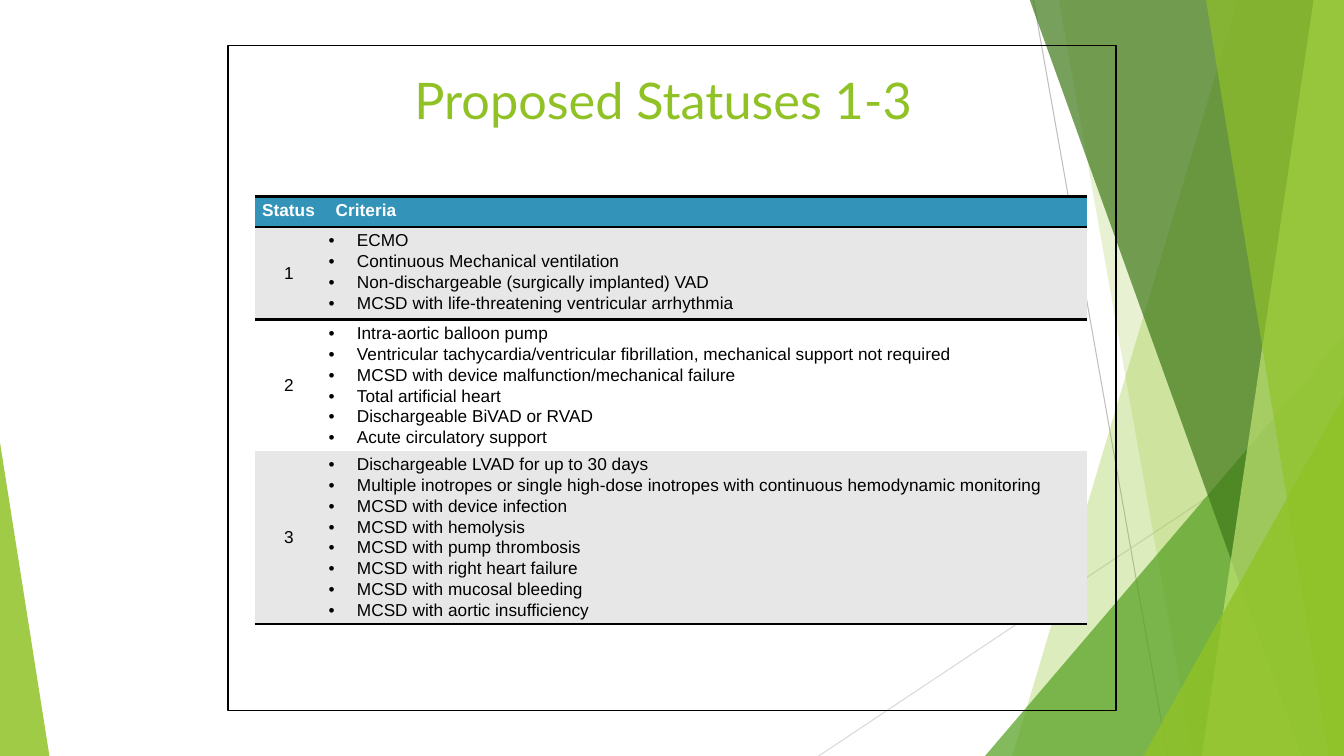
from lxml import etree
from pptx import Presentation
from pptx import util as u
from pptx.dml.color import RGBColor
from pptx.enum import shapes, text
from pptx.oxml import ns

PX = 9144  # 100 px to the inch
WIDTH, HEIGHT = 1333, 750
COLORS = {
    "lime": "90C226", "leaf": "54A021", "forest": "3F7819", "pale": "C0E474",
    "header": "3393B9", "band": "E7E7E7", "black": "000000", "white": "FFFFFF",
    "line": "BFBFBF", "faint": "D9D9D9",
}
PLAIN_TABLE = "{2D5ABB26-0587-4C30-8999-92F81FD0307C}"
BODY_SIZE = u.Pt(12.3)
LINE_PITCH = u.Pt(14.85)
HANG = 28

CRITERIA = [
    ("1", 92, ["ECMO",
               "Continuous Mechanical ventilation",
               "Non-dischargeable (surgically implanted) VAD",
               "MCSD with life-threatening ventricular arrhythmia"]),
    ("2", 130, ["Intra-aortic balloon pump",
                "Ventricular tachycardia/ventricular fibrillation, "
                "mechanical support not required",
                "MCSD with device malfunction/mechanical failure",
                "Total artificial heart",
                "Dischargeable BiVAD or RVAD",
                "Acute circulatory support"]),
    ("3", 172, ["Dischargeable LVAD for up to 30 days",
                "Multiple inotropes or single high-dose inotropes with "
                "continuous hemodynamic monitoring",
                "MCSD with device infection",
                "MCSD with hemolysis",
                "MCSD with pump thrombosis",
                "MCSD with right heart failure",
                "MCSD with mucosal bleeding",
                "MCSD with aortic insufficiency"]),
]


def px(*lengths):
    return [length * PX for length in lengths]


def rgb(name):
    return RGBColor.from_string(COLORS[name])


def add_element(parent, tag, **attributes):
    return etree.SubElement(parent, ns.qn(tag), attributes)


def paint(shape, color, opacity):
    shape.shadow.inherit = False
    shape.line.fill.background()
    shape.fill.solid()
    shape.fill.fore_color.rgb = rgb(color)
    fill = shape.fill._xPr.find(ns.qn("a:solidFill"))
    add_element(fill[0], "a:alpha", val=str(opacity * 1000))


def add_ray(page, start, end, color):
    ray = page.shapes.add_connector(
        shapes.MSO_CONNECTOR.STRAIGHT, *px(*start, *end))
    ray.line.color.rgb = rgb(color)
    ray.line.width = u.Pt(0.75)
    add_element(ray._element.spPr, "a:effectLst")


def add_shard(page, top_left, top_right, bottom_left, color, opacity):
    """Draw a full-height facet that ends at the right edge of the page."""
    builder = page.shapes.build_freeform(top_left, -1, scale=PX)
    builder.add_line_segments(
        [(top_right, -1), (WIDTH, HEIGHT), (bottom_left, HEIGHT)])
    paint(builder.convert_to_shape(), color, opacity)


def add_corner(page, left, top, width, apex, color, opacity):
    """Draw a triangle that stands on the bottom edge of the page."""
    corner = page.shapes.add_shape(
        shapes.MSO_SHAPE.ISOSCELES_TRIANGLE,
        *px(left, top, width, HEIGHT - top))
    corner.adjustments[0] = apex
    paint(corner, color, opacity)


def add_decoration(page):
    add_ray(page, (1025, 0), (1158, HEIGHT), "line")
    add_ray(page, (WIDTH, 403), (812, HEIGHT), "faint")
    add_shard(page, 1228, WIDTH, 1004, "lime", 30)
    add_shard(page, 1050, WIDTH, 1183, "lime", 20)
    add_corner(page, 977, 333, 356, 1, "leaf", 72)
    add_shard(page, 1021, WIDTH, 1291, "forest", 70)
    add_shard(page, 1303, WIDTH, 1192, "pale", 70)
    add_shard(page, 1196, WIDTH, 1318, "lime", 65)
    add_corner(page, 1134, 393, 199, 1, "lime", 80)
    add_corner(page, 0, 439, 49, 0, "lime", 85)


def add_title(page, wording):
    title = page.shapes.title
    title.left, title.top, title.width, title.height = px(410, 68, 531, 62)
    frame = title.text_frame
    frame.margin_left, frame.margin_top = px(1, 1)
    frame.margin_right = frame.margin_bottom = 0
    frame.vertical_anchor = text.MSO_ANCHOR.TOP
    frame.auto_size = text.MSO_AUTO_SIZE.NONE
    para = frame.paragraphs[0]
    para.alignment = text.PP_ALIGN.LEFT
    add_span(para, wording, "lime", "Lato", u.Pt(36))


def add_span(para, wording, color, font="Arial", size=BODY_SIZE, bold=False):
    span = para.add_run()
    span.text = wording
    span.font.name, span.font.size, span.font.bold = font, size, bold
    span.font.color.rgb = rgb(color)


def add_bullet(para):
    properties = para._p.get_or_add_pPr()
    properties.set("marL", str(HANG * PX))
    properties.set("indent", str(-HANG * PX))
    add_element(properties, "a:buFont", typeface="Arial")
    add_element(properties, "a:buChar", char="•")


def rule_cell(cell, *sides):
    """Draw black borders; call before the cell is filled."""
    for side in sides:
        border = add_element(cell._tc.get_or_add_tcPr(), side, w=str(u.Pt(2)))
        fill = add_element(border, "a:solidFill")
        add_element(fill, "a:srgbClr", val=COLORS["black"])


def fill_cell(cell, color):
    if color:
        cell.fill.solid()
        cell.fill.fore_color.rgb = rgb(color)
    else:
        cell.fill.background()


def set_margins(cell, left, top, bottom):
    cell.margin_left, cell.margin_top, cell.margin_bottom = px(left, top, bottom)
    cell.margin_right = 0
    cell.vertical_anchor = text.MSO_ANCHOR.MIDDLE


def write_header(cell, wording, left):
    set_margins(cell, left, 0, 3)
    add_span(cell.text_frame.paragraphs[0], wording, "white", bold=True)
    rule_cell(cell, "a:lnT", "a:lnB")
    fill_cell(cell, "header")


def write_status(cell, status):
    set_margins(cell, 0, 0, 0)
    para = cell.text_frame.paragraphs[0]
    para.alignment = text.PP_ALIGN.CENTER
    add_span(para, status, "black")


def write_criteria(cell, criteria):
    set_margins(cell, 6, 3, 0)
    cell.vertical_anchor = text.MSO_ANCHOR.TOP
    frame = cell.text_frame
    for index, criterion in enumerate(criteria):
        para = frame.add_paragraph() if index else frame.paragraphs[0]
        add_bullet(para)
        para.line_spacing = LINE_PITCH
        add_span(para, criterion, "black")


def add_status_table(page):
    heights = [30] + [height for _, height, _ in CRITERIA]
    frame = page.shapes.add_table(
        len(heights), 2, *px(253, 195, 825, sum(heights)))
    table = frame.table
    table.horz_banding = False
    table._tbl.tblPr.find(ns.qn("a:tableStyleId")).text = PLAIN_TABLE
    for column, width in zip(table.columns, px(67, 758)):
        column.width = width
    for row, height in zip(table.rows, px(*heights)):
        row.height = height
    write_header(table.cell(0, 0), "Status", 7)
    write_header(table.cell(0, 1), "Criteria", 13)
    for row, (status, _, criteria) in enumerate(CRITERIA, start=1):
        write_status(table.cell(row, 0), status)
        write_criteria(table.cell(row, 1), criteria)
        for cell in table.rows[row].cells:
            if row == 1:
                rule_cell(cell, "a:lnT")
            if row == len(CRITERIA):
                rule_cell(cell, "a:lnB")
            fill_cell(cell, "band" if row % 2 else None)


def add_frame(page):
    frame = page.shapes.add_shape(
        shapes.MSO_SHAPE.RECTANGLE, *px(226, 45, 881, 660))
    frame.shadow.inherit = False
    frame.fill.background()
    frame.line.color.rgb = rgb("black")
    frame.line.width = u.Pt(0.96)


def main():
    deck = Presentation()
    deck.slide_width, deck.slide_height = px(WIDTH, HEIGHT)
    page = deck.slides.add_slide(deck.slide_layouts.get_by_name("Title Only"))
    add_decoration(page)
    add_title(page, "Proposed Statuses 1-3")
    add_status_table(page)
    add_frame(page)
    deck.save("out.pptx")


if __name__ == "__main__":
    main()
